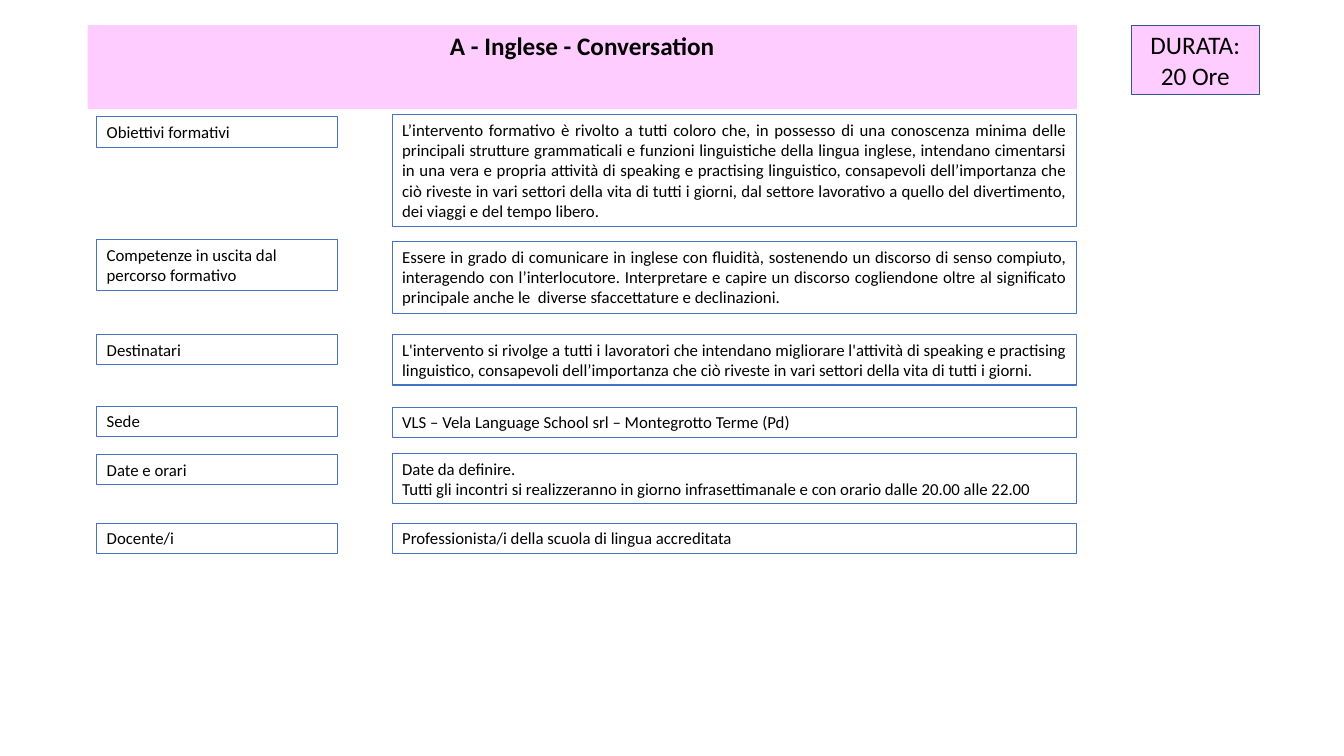
from pptx import Presentation
from pptx.dml.color import RGBColor
from pptx.enum.shapes import MSO_SHAPE
from pptx.enum.text import MSO_ANCHOR, MSO_AUTO_SIZE, PP_ALIGN
from pptx.util import Inches, Pt

PINK = RGBColor(0xFF, 0xCC, 0xFF)
BLUE = RGBColor(0x44, 0x72, 0xC4)
NAVY = RGBColor(0x32, 0x54, 0x91)
BLACK = RGBColor(0, 0, 0)
RECTANGLE = MSO_SHAPE.RECTANGLE
LEFT, CENTER, JUSTIFY = PP_ALIGN.LEFT, PP_ALIGN.CENTER, PP_ALIGN.JUSTIFY
TOP, MIDDLE = MSO_ANCHOR.TOP, MSO_ANCHOR.MIDDLE
GROW, FIXED = MSO_AUTO_SIZE.SHAPE_TO_FIT_TEXT, MSO_AUTO_SIZE.NONE

LABEL_LEFT, LABEL_WIDTH = 0.96, 2.39
DETAIL_LEFT, DETAIL_WIDTH = 3.89, 6.79

SECTIONS = [
    ("Obiettivi formativi", 1.16, 0.3, 1.14, 1.11, JUSTIFY, [
        "L’intervento formativo è rivolto a tutti coloro che, in possesso di una "
        "conoscenza minima delle principali strutture grammaticali e funzioni "
        "linguistiche della lingua inglese, intendano cimentarsi in una vera e propria "
        "attività di speaking e practising linguistico, consapevoli dell’importanza che "
        "ciò riveste in vari settori della vita di tutti i giorni, dal settore "
        "lavorativo a quello del divertimento, dei viaggi e del tempo libero."]),
    ("Competenze in uscita dal percorso formativo", 2.38, 0.5, 2.4, 0.71, JUSTIFY, [
        "Essere in grado di comunicare in inglese con fluidità, sostenendo un discorso "
        "di senso compiuto, interagendo con l’interlocutore. Interpretare e capire un "
        "discorso cogliendone oltre al significato principale anche le  diverse "
        "sfaccettature e declinazioni."]),
    ("Destinatari", 3.32, 0.3, 3.32, 0.5, JUSTIFY, [
        "L'intervento si rivolge a tutti i lavoratori che intendano migliorare "
        "l'attività di speaking e practising linguistico, consapevoli dell’importanza "
        "che ciò riveste in vari settori della vita di tutti i giorni."]),
    ("Sede", 4.03, 0.3, 4.04, 0.3, LEFT, [
        "VLS – Vela Language School srl – Montegrotto Terme (Pd)"]),
    ("Date e orari", 4.51, 0.3, 4.5, 0.5, LEFT, [
        "Date da definire.",
        "Tutti gli incontri si realizzeranno in giorno infrasettimanale e con orario "
        "dalle 20.00 alle 22.00"]),
    ("Docente/i", 5.19, 0.3, 5.19, 0.3, LEFT, [
        "Professionista/i della scuola di lingua accreditata"]),
]


class CourseSheet:
    font_name = "Calibri"

    def __init__(self, presentation):
        self.slide = presentation.slides.add_slide(presentation.slide_layouts[5])

    def set_text(self, shape, lines, align, size, bold=False, anchor=TOP, auto_size=GROW):
        frame = shape.text_frame
        frame.text = "\n".join(lines)
        frame_format = {"word_wrap": True, "auto_size": auto_size,
                        "vertical_anchor": anchor,
                        "margin_left": Inches(0.1), "margin_right": Inches(0.1),
                        "margin_top": Inches(0.05), "margin_bottom": Inches(0.05)}
        for key, value in frame_format.items():
            setattr(frame, key, value)
        font_format = {"name": self.font_name, "size": Pt(size), "bold": bold}
        for paragraph in frame.paragraphs:
            paragraph.alignment = align
            for run in paragraph.runs:
                for key, value in font_format.items():
                    setattr(run.font, key, value)
                run.font.color.rgb = BLACK

    def fill(self, shape, color):
        shape.fill.solid()
        shape.fill.fore_color.rgb = color

    def outline(self, shape, color, width):
        shape.line.color.rgb = color
        shape.line.width = Pt(width)

    def title(self, box, text):
        heading = self.slide.shapes.title
        for key, value in zip(("left", "top", "width", "height"), box):
            setattr(heading, key, Inches(value))
        self.fill(heading, PINK)
        self.set_text(heading, [text], CENTER, 18, bold=True)

    def card(self, box, lines, align=LEFT):
        card = self.slide.shapes.add_textbox(*map(Inches, box))
        self.outline(card, BLUE, 0.75)
        self.set_text(card, lines, align, 12)

    def badge(self, box, lines):
        badge = self.slide.shapes.add_shape(RECTANGLE, *map(Inches, box))
        badge.shadow.inherit = False
        self.fill(badge, PINK)
        self.outline(badge, NAVY, 1)
        self.set_text(badge, lines, CENTER, 18, anchor=MIDDLE, auto_size=FIXED)


def main():
    presentation = Presentation()
    presentation.slide_width = Inches(13.33)
    presentation.slide_height = Inches(7.5)
    sheet = CourseSheet(presentation)
    sheet.title((0.87, 0.25, 9.81, 0.4), "A - Inglese - Conversation")
    for label, label_top, label_height, top, height, align, details in SECTIONS:
        sheet.card((LABEL_LEFT, label_top, LABEL_WIDTH, label_height), [label])
        sheet.card((DETAIL_LEFT, top, DETAIL_WIDTH, height), details, align)
    sheet.badge((11.22, 0.25, 1.27, 0.69), ["DURATA:", "20 Ore"])
    presentation.save("out.pptx")


if __name__ == "__main__":
    main()
